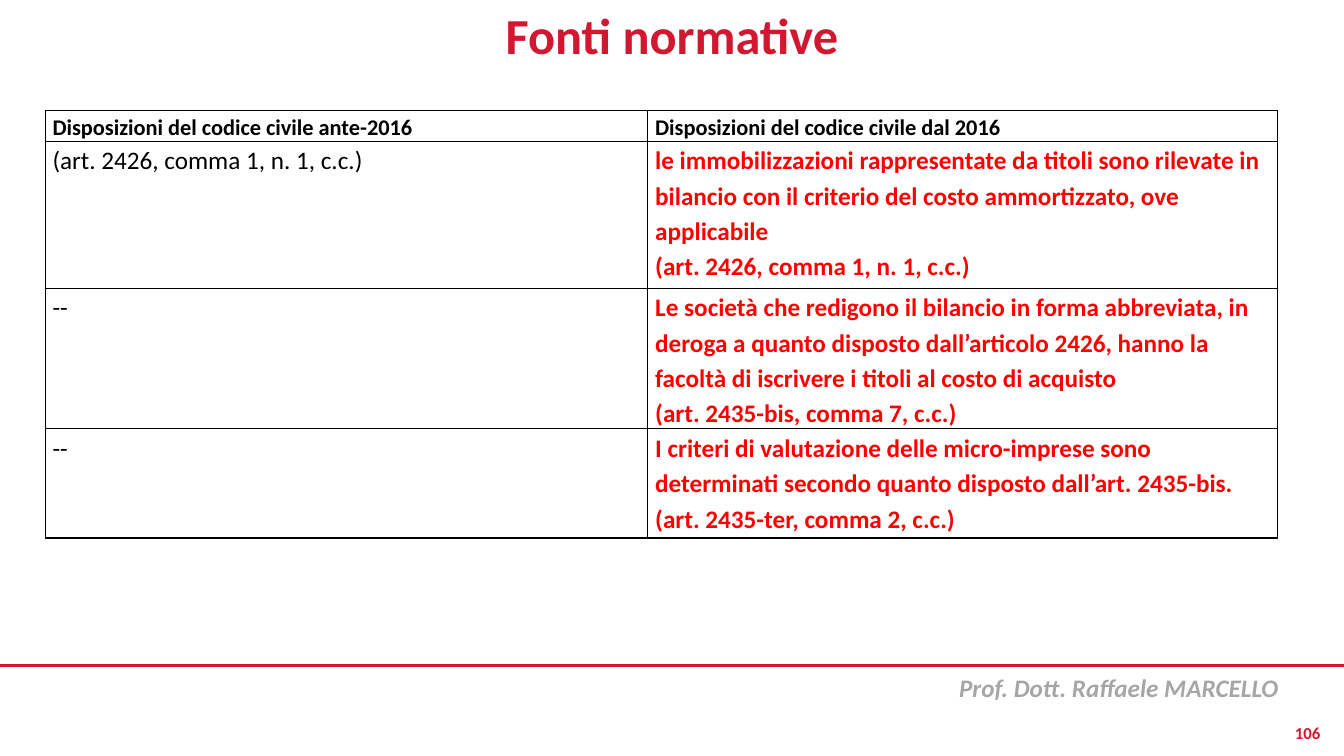
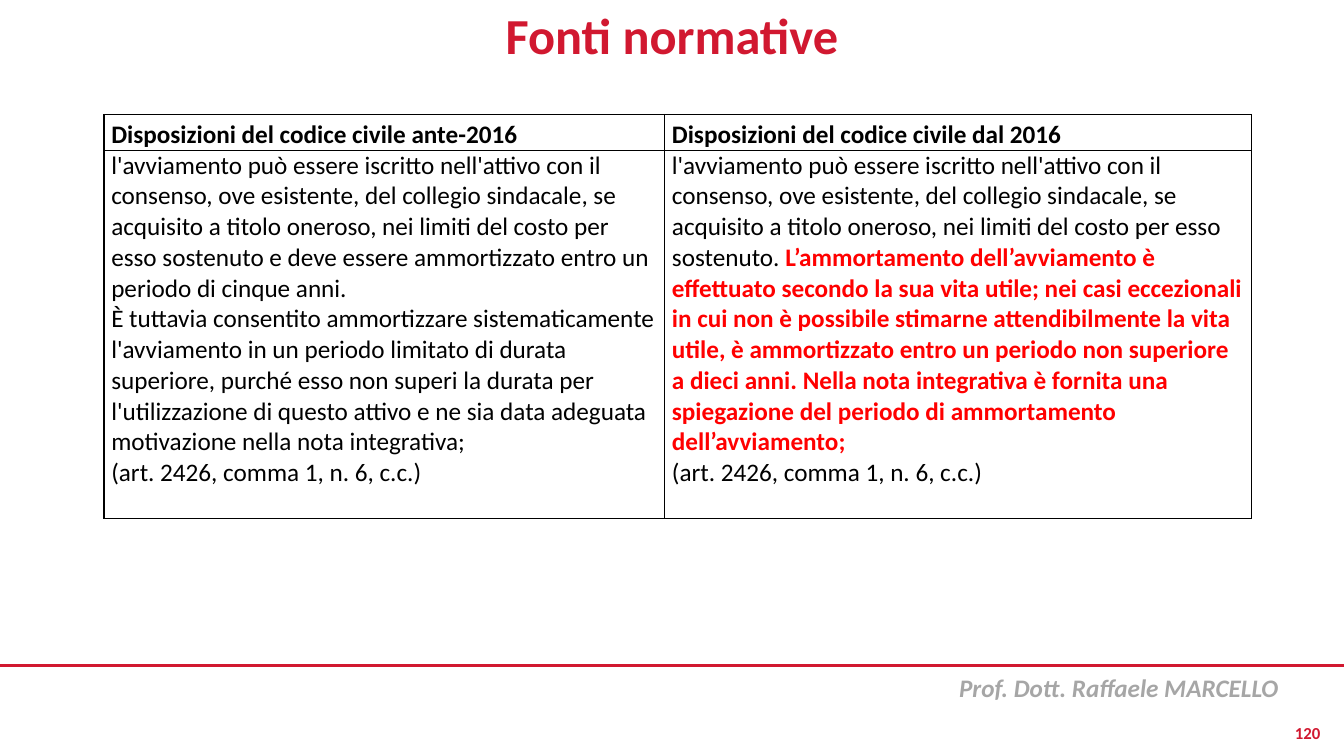
from dataclasses import dataclass

from pptx import Presentation
from pptx.dml.color import RGBColor
from pptx.enum.shapes import MSO_CONNECTOR as Connector
from pptx.enum.text import MSO_ANCHOR as Anchor, PP_ALIGN as Align
from pptx.oxml.xmlchemy import OxmlElement
from pptx.util import Pt

EMU_PER_PX = 9525
SLIDE_WIDTH, SLIDE_HEIGHT = 1280, 720


def px(length):
    return length * EMU_PER_PX


@dataclass(frozen=True)
class TextStyle:
    size: int
    color: str
    bold: bool = False
    italic: bool = False


@dataclass(frozen=True)
class Theme:
    font: str = "Calibri"
    accent: str = "D11830"
    border: str = "000000"
    rule_width: float = 1.75
    border_width: float = 1
    cell_inset: int = 7
    title: TextStyle = TextStyle(36, "D11830", bold=True)
    footer: TextStyle = TextStyle(18, "A6A6A6", bold=True, italic=True)
    page_number: TextStyle = TextStyle(12, "D11830", bold=True)
    small_header: TextStyle = TextStyle(16, "000000", bold=True)
    header: TextStyle = TextStyle(18, "000000", bold=True)
    body: TextStyle = TextStyle(18, "000000")
    change: TextStyle = TextStyle(18, "FF0000", bold=True)


class DeckBuilder:
    def __init__(self, theme):
        self.theme = theme
        self.deck = Presentation()
        self.deck.slide_width = px(SLIDE_WIDTH)
        self.deck.slide_height = px(SLIDE_HEIGHT)
        self.slide = None

    def add_slide(self, title, number):
        """Start a slide with the shared title, rule, footer and page number."""
        self.slide = self.deck.slides.add_slide(self.deck.slide_layouts[6])
        theme = self.theme
        self.add_rule(634)
        self.add_text(904, 636, 376, 97 - 13, "Prof. Dott. Raffaele MARCELLO", theme.footer)
        self.add_text(0, 0, SLIDE_WIDTH, 72, title, theme.title,
                      Align.CENTER, Anchor.MIDDLE, spacing=0.9)
        self.add_text(1222, 679, 45, 38, str(number), theme.page_number,
                      Align.RIGHT, Anchor.MIDDLE)

    def add_rule(self, top):
        rule = self.slide.shapes.add_connector(
            Connector.STRAIGHT, 0, px(top), px(SLIDE_WIDTH), px(top))
        rule.line.color.rgb = RGBColor.from_string(self.theme.accent)
        rule.line.width = Pt(self.theme.rule_width)
        rule._element.spPr.append(OxmlElement("a:effectLst"))

    def add_text(self, left, top, width, height, text, style,
                 align=Align.LEFT, anchor=Anchor.TOP, spacing=1.0):
        box = self.slide.shapes.add_textbox(px(left), px(top), px(width), px(height))
        frame = box.text_frame
        frame.word_wrap = True
        frame.vertical_anchor = anchor
        para = frame.paragraphs[0]
        para.alignment = align
        self.fill_paragraph(para, [(text, style)], spacing)

    def fill_paragraph(self, para, spans, spacing):
        para.line_spacing = spacing
        for text, style in spans:
            span = para.add_run()
            span.text = text
            span.font.name = self.theme.font
            span.font.size = Pt(style.size)
            span.font.bold = style.bold
            span.font.italic = style.italic
            span.font.color.rgb = RGBColor.from_string(style.color)

    def add_table(self, left, top, widths, heights, header_style, rows, body_spacing):
        """Each body cell is a list of paragraphs, each a list of (text, style)."""
        table = self.slide.shapes.add_table(
            len(heights), len(widths), px(left), px(top),
            px(sum(widths)), px(sum(heights))).table
        table.first_row = table.horz_banding = False
        for column, width in zip(table.columns, widths):
            column.width = px(width)
        for row, height in zip(table.rows, heights):
            row.height = px(height)
        headers = [[[(f"Disposizioni del codice civile {period}", header_style)]]
                   for period in ("ante-2016", "dal 2016")]
        for index, contents in enumerate([headers, *rows]):
            spacing = body_spacing if index else 1.15
            for cell, paragraphs in zip(table.rows[index].cells, contents):
                self.fill_cell(cell, paragraphs, spacing)

    def fill_cell(self, cell, paragraphs, spacing):
        cell.margin_left = cell.margin_right = px(self.theme.cell_inset)
        cell.margin_top = cell.margin_bottom = 0
        cell.fill.background()
        self.add_borders(cell)
        frame = cell.text_frame
        for index, spans in enumerate(paragraphs):
            para = frame.add_paragraph() if index else frame.paragraphs[0]
            self.fill_paragraph(para, spans, spacing)

    def add_borders(self, cell):
        properties = cell._tc.get_or_add_tcPr()
        for index, side in enumerate("LRTB"):
            line = OxmlElement(f"a:ln{side}")
            line.set("w", str(Pt(self.theme.border_width)))
            fill = OxmlElement("a:solidFill")
            color = OxmlElement("a:srgbClr")
            color.set("val", self.theme.border)
            fill.append(color)
            line.append(fill)
            properties.insert(index, line)


def one_style(style, *texts):
    return [[(text, style)] for text in texts]


def add_securities_slide(builder):
    theme = builder.theme
    builder.add_slide("Fonti normative", 106)
    rows = [
        [one_style(theme.body, "(art. 2426, comma 1, n. 1, c.c.)"),
         one_style(theme.change,
                   "le immobilizzazioni rappresentate da titoli sono rilevate in bilancio "
                   "con il criterio del costo ammortizzato, ove applicabile",
                   "(art. 2426, comma 1, n. 1, c.c.)")],
        [one_style(theme.body, "--"),
         one_style(theme.change,
                   "Le società che redigono il bilancio in forma abbreviata, in deroga a "
                   "quanto disposto dall’articolo 2426, hanno la facoltà di iscrivere i "
                   "titoli al costo di acquisto",
                   "(art. 2435-bis, comma 7, c.c.)")],
        [one_style(theme.body, "--"),
         one_style(theme.change,
                   "I criteri di valutazione delle micro-imprese sono determinati secondo "
                   "quanto disposto dall’art. 2435-bis.",
                   "(art. 2435-ter, comma 2, c.c.)")],
    ]
    builder.add_table(43, 105, [574, 600], [29, 140, 134, 104],
                      theme.small_header, rows, body_spacing=1.15)


def add_goodwill_slide(builder):
    theme = builder.theme
    builder.add_slide("Fonti normative", 120)
    shared_rule = ("l'avviamento può essere iscritto nell'attivo con il consenso, ove "
                   "esistente, del collegio sindacale, se acquisito a titolo oneroso, nei "
                   "limiti del costo per esso sostenuto")
    article = "(art. 2426, comma 1, n. 6, c.c.)"
    before = one_style(
        theme.body,
        f"{shared_rule} e deve essere ammortizzato entro un periodo di cinque anni.",
        "È tuttavia consentito ammortizzare sistematicamente l'avviamento in un periodo "
        "limitato di durata superiore, purché esso non superi la durata per "
        "l'utilizzazione di questo attivo e ne sia data adeguata motivazione nella nota "
        "integrativa;",
        article)
    after = [
        [(f"{shared_rule}. ", theme.body),
         ("L’ammortamento dell’avviamento è effettuato secondo la sua vita utile; nei "
          "casi eccezionali in cui non è possibile stimarne attendibilmente la vita "
          "utile, è ammortizzato entro un periodo non superiore a dieci anni. Nella nota "
          "integrativa è fornita una spiegazione del periodo di ammortamento "
          "dell’avviamento;", theme.change)],
        [(article, theme.body)],
    ]
    builder.add_table(99, 109, [534, 559], [34, 351],
                      theme.header, [[before, after]], body_spacing=1.0)


def main():
    builder = DeckBuilder(Theme())
    add_securities_slide(builder)
    add_goodwill_slide(builder)
    builder.deck.save("out.pptx")


if __name__ == "__main__":
    main()
